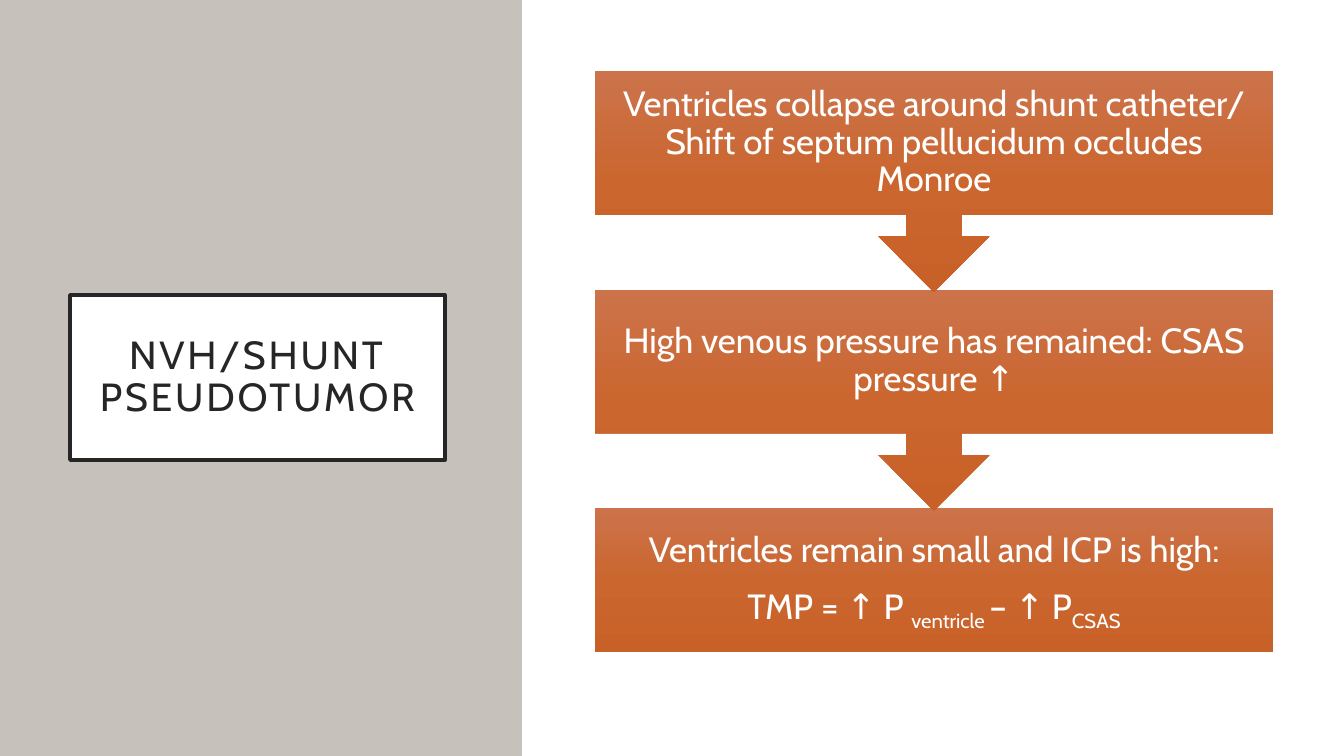
"""Build a slide with a title panel and a three-step downward flow."""
import copy

import pptx
import pptx.dml.color
import pptx.enum.shapes
import pptx.enum.text
import pptx.util

HUES = {"panel": "C6C1BA", "white": "FFFFFF", "ink": "262626",
        "top": "CC734B", "mid": "CB662F", "low": "C86128"}
FONT = "Cabin"
SHAPE = pptx.enum.shapes.MSO_SHAPE
STEPS = [
    [[("Ventricles collapse around shunt catheter/ "
       "Shift of septum pellucidum occludes Monroe", 0)]],
    [[("High venous pressure has remained: CSAS pressure ↑", 0)]],
    [[("Ventricles remain small and ICP is high:", 0)],
     [("TMP = ↑ P ", 0), ("ventricle ", -25), ("– ↑ P", 0), ("CSAS", -25)]],
]


def px(count):
    """Turn pixels into EMU."""
    return pptx.util.Emu(round(count * 914400 / 100.8))


def hue(name):
    """Return the named colour."""
    return pptx.dml.color.RGBColor.from_string(HUES[name])


def write(shape, paras, size=25, color="white", inset=19, track=0, gap=11):
    """Fill a shape with centred paragraphs of (text, baseline) runs."""
    frame = shape.text_frame
    frame.word_wrap = True
    frame.auto_size = pptx.enum.text.MSO_AUTO_SIZE.NONE
    frame.vertical_anchor = pptx.enum.text.MSO_ANCHOR.MIDDLE
    frame.margin_left = frame.margin_right = px(inset)
    frame.margin_top = frame.margin_bottom = px(inset)
    for index, runs in enumerate(paras):
        para = frame.add_paragraph() if index else frame.paragraphs[0]
        para.alignment = pptx.enum.text.PP_ALIGN.CENTER
        para.line_spacing = 0.9
        para.space_before = pptx.util.Pt(gap if index else 0)
        for words, base in runs:
            run = para.add_run()
            run.text = words
            run.font.name = FONT
            run.font.size = pptx.util.Pt(size)
            run.font.color.rgb = hue(color)
            props = run._r.get_or_add_rPr()
            if base:
                props.set("baseline", str(base * 1000))
            if track:
                props.set("spc", str(track * 100))


def block(slide, kind, left, top, width, height):
    """Add a preset shape without line or shadow."""
    shape = slide.shapes.add_shape(kind, px(left), px(top), px(width), px(height))
    shape.shadow.inherit = False
    shape.line.fill.background()
    return shape


def shade(shape):
    """Give a shape the downward three-stop gradient."""
    shape.fill.gradient()
    shape.fill.gradient_angle = 270
    stops = shape._element.spPr.find(".//" + pptx.oxml.ns.qn("a:gsLst"))
    stops.append(copy.deepcopy(stops[0]))
    for index, (stop, name) in enumerate(
            zip(shape.fill.gradient_stops, ("top", "mid", "low"))):
        stop.position = index / 2
        stop.color.rgb = hue(name)


def panel(slide, left, top, width, height):
    """Draw the side panel with the framed title."""
    back = block(slide, SHAPE.RECTANGLE, left, top, width, height)
    back.fill.solid()
    back.fill.fore_color.rgb = hue("panel")
    title = slide.shapes.title
    title.left, title.top = px(left + 70), px(top + 295)
    title.width, title.height = px(375), px(165)
    title.fill.solid()
    title.fill.fore_color.rgb = hue("white")
    title.line.color.rgb = hue("ink")
    title.line.width = pptx.util.Pt(2.5)
    write(title, [[("NVH/SHUNT PSEUDOTUMOR", 0)]], size=28, color="ink",
          inset=20, track=2)
    back._element.addnext(title._element)


def flow(slide, left, top, width, height):
    """Stack the steps, each but the last pointing to the next."""
    body, arrow = 144, 77
    pitch = (height - body) / (len(STEPS) - 1)
    for index in reversed(range(len(STEPS))):
        last = index == len(STEPS) - 1
        kind = SHAPE.RECTANGLE if last else SHAPE.DOWN_ARROW_CALLOUT
        tall = body if last else body + arrow
        step = block(slide, kind, left, top + index * pitch, width, tall)
        shade(step)
        write(step, STEPS[index])


def main():
    """Build and save the slide."""
    deck = pptx.Presentation()
    deck.slide_width, deck.slide_height = px(1344), px(756)
    slide = deck.slides.add_slide(deck.slide_layouts[5])
    panel(slide, 0, 0, 522, 756)
    flow(slide, 595, 71, 678, 581)
    deck.save("out.pptx")


if __name__ == "__main__":
    main()
